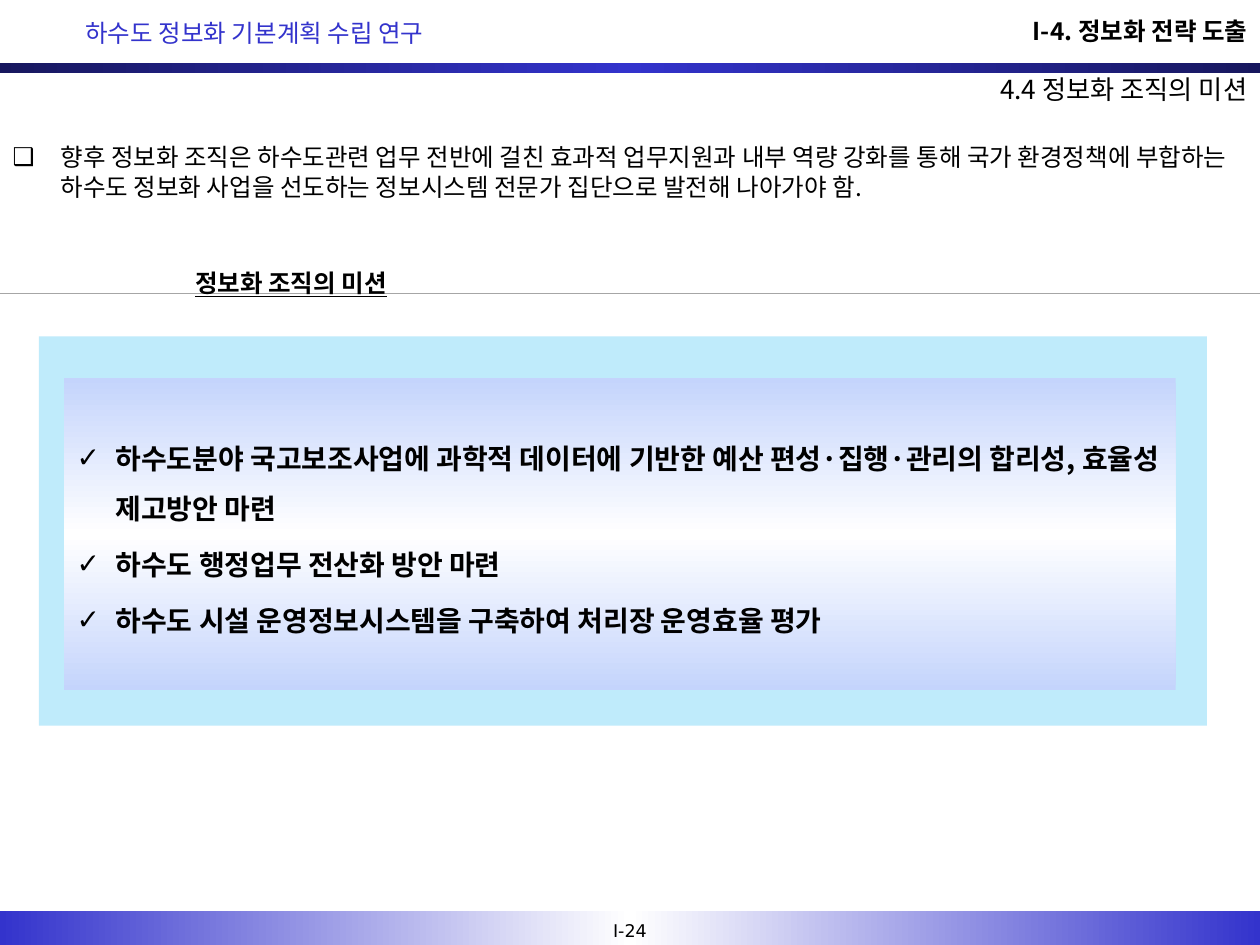
import copy
import pptx
import pptx.util
import pptx.dml.color
import pptx.enum.dml
import pptx.enum.shapes
import pptx.enum.text
import pptx.oxml
import pptx.oxml.ns

WIDE, HIGH = 10, 7.5
FONT, SIGN = "Noto Sans CJK KR", "DejaVu Sans"
BLACK, BLUE, NAVY, WHITE, PALE = "000000", "3333CC", "17175E", "FFFFFF", "C4D4FC"
ALIGN = pptx.enum.text.PP_ALIGN
ANCHOR = pptx.enum.text.MSO_ANCHOR

TITLE = "4.4 정보화 조직의 미션"
INTRO = ["향후 정보화 조직은 하수도관련 업무 전반에 걸친 효과적 업무지원과 내부 역량 강화를 통해 "
         "국가 환경정책에 부합하는 하수도 정보화 사업을 선도하는 정보시스템 전문가 집단으로 발전해 나아가야 함."]
GOALS = [
    "하수도분야 국고보조사업에 과학적 데이터에 기반한 예산 편성·집행·관리의 합리성, 효율성 제고방안 마련",
    "하수도 행정업무 전산화 방안 마련",
    "하수도 시설 운영정보시스템을 구축하여 처리장 운영효율 평가",
]
# place, stops from edge to middle, angle
BANDS = [
    ((0, 0.5, WIDE, 0.08), (NAVY, BLUE), 0),
    ((0, 7.23, WIDE, 0.27), (BLUE, WHITE), 0),
]
PANEL = (0.31, 2.67, 9.27, 3.09)
CARD = ((0.51, 3, 8.82, 2.48), (PALE, WHITE), 90)
# text, place, look
LABELS = [
    ("I-24", (4.5, 7.25, 1, 0.27),
     dict(size=10, font=SIGN, align=ALIGN.CENTER, anchor=ANCHOR.MIDDLE)),
    ("하수도 정보화 기본계획 수립 연구", (0.58, 0.07, 5, 0.36),
     dict(color=BLUE, anchor=ANCHOR.MIDDLE, lead=1.1)),
    ("I-4. 정보화 전략 도출", (6, 0.08, 4, 0.33), dict(bold=True, align=ALIGN.RIGHT)),
    ("정보화 조직의 미션", (1.28, 2.08, 2.06, 0.33),
     dict(bold=True, line=True, align=ALIGN.CENTER)),
]


def tint(code):
    return pptx.dml.color.RGBColor.from_string(code)


def inches(place):
    return [pptx.util.Inches(x) for x in place]


def node(tag, **attrs):
    item = pptx.oxml.parse_xml(f"<a:{tag} {pptx.oxml.ns.nsdecls('a')}/>")
    for key, value in attrs.items():
        item.set(key, str(value))
    return item


def block(slide, place):
    shape = slide.shapes.add_shape(
        pptx.enum.shapes.MSO_SHAPE.RECTANGLE, *inches(place))
    shape.shadow.inherit = False
    shape.line.fill.background()
    return shape


def blend(slide, place, pair, angle):
    """Draw a block that fades from its edges to its middle and back."""
    fill = block(slide, place).fill
    fill.gradient()
    fill.gradient_angle = angle
    first = fill.gradient_stops[0]._gs
    first.addnext(copy.deepcopy(first))
    edge, mid = pair
    for stop, spot, code in zip(fill.gradient_stops, (0, 0.5, 1), (edge, mid, edge)):
        stop.position = spot
        stop.color.rgb = tint(code)


def write(shape, lines, size=14, font=FONT, color=BLACK, bold=False, line=False,
          align=ALIGN.LEFT, anchor=ANCHOR.TOP, lead=1, gap=0, mark=None, indent=0):
    frame = shape.text_frame
    frame.text = "\n".join(lines)
    frame.word_wrap = True
    frame.auto_size = pptx.enum.text.MSO_AUTO_SIZE.NONE
    frame.vertical_anchor = anchor
    for i, para in enumerate(frame.paragraphs):
        if mark:
            props = para._p.get_or_add_pPr()
            step = pptx.util.Inches(indent)
            props.set("marL", str(step))
            props.set("indent", str(-step))
            props.append(node("buFont", typeface=SIGN))
            props.append(node("buChar", char=mark))
        para.alignment = align
        para.line_spacing = lead
        para.space_before = pptx.util.Pt(gap if i else 0)
        for run in para.runs:
            run.font.size = pptx.util.Pt(size)
            run.font.bold = bold
            run.font.underline = line
            run.font.color.rgb = tint(color)
            run.font.name = font
            run._r.rPr.find(pptx.oxml.ns.qn("a:latin")).addnext(
                node("ea", typeface=font))


def move(shape, place):
    shape.left, shape.top, shape.width, shape.height = inches(place)
    return shape


def rule(slide, y):
    wire = slide.shapes.add_connector(
        pptx.enum.shapes.MSO_CONNECTOR.STRAIGHT, *inches((0, y, WIDE, y)))
    wire.line.color.rgb = tint("A6A6A6")
    wire.line.width = pptx.util.Pt(0.25)
    wire.line.dash_style = pptx.enum.dml.MSO_LINE.ROUND_DOT
    wire._element.spPr.append(node("effectLst"))


def main():
    deck = pptx.Presentation()
    deck.slide_width, deck.slide_height = inches((WIDE, HIGH))
    slide = deck.slides.add_slide(deck.slide_layouts[1])

    for band in BANDS:
        blend(slide, *band)
    rule(slide, 2.33)
    panel = block(slide, PANEL)
    panel.fill.solid()
    panel.fill.fore_color.rgb = tint("00B0F0")
    panel.fill._xPr.find(".//" + pptx.oxml.ns.qn("a:srgbClr")).append(
        node("alpha", val=25000))
    blend(slide, *CARD)

    title, body = slide.placeholders
    write(move(title, (1.75, 0.5, 8.25, 0.42)), [TITLE], size=15,
          align=ALIGN.RIGHT, anchor=ANCHOR.MIDDLE)
    write(move(body, (0, 1.08, WIDE, 0.64)), INTRO, mark="❑", indent=0.38)
    for text, place, look in LABELS:
        write(slide.shapes.add_textbox(*inches(place)), [text], **look)
    goals = slide.shapes.add_textbox(*inches((0.51, 3.32, 8.82, 1.82)))
    write(goals, GOALS, size=16, bold=True, lead=1.5, gap=3.2, mark="✓", indent=0.31)

    deck.save("out.pptx")


if __name__ == "__main__":
    main()
